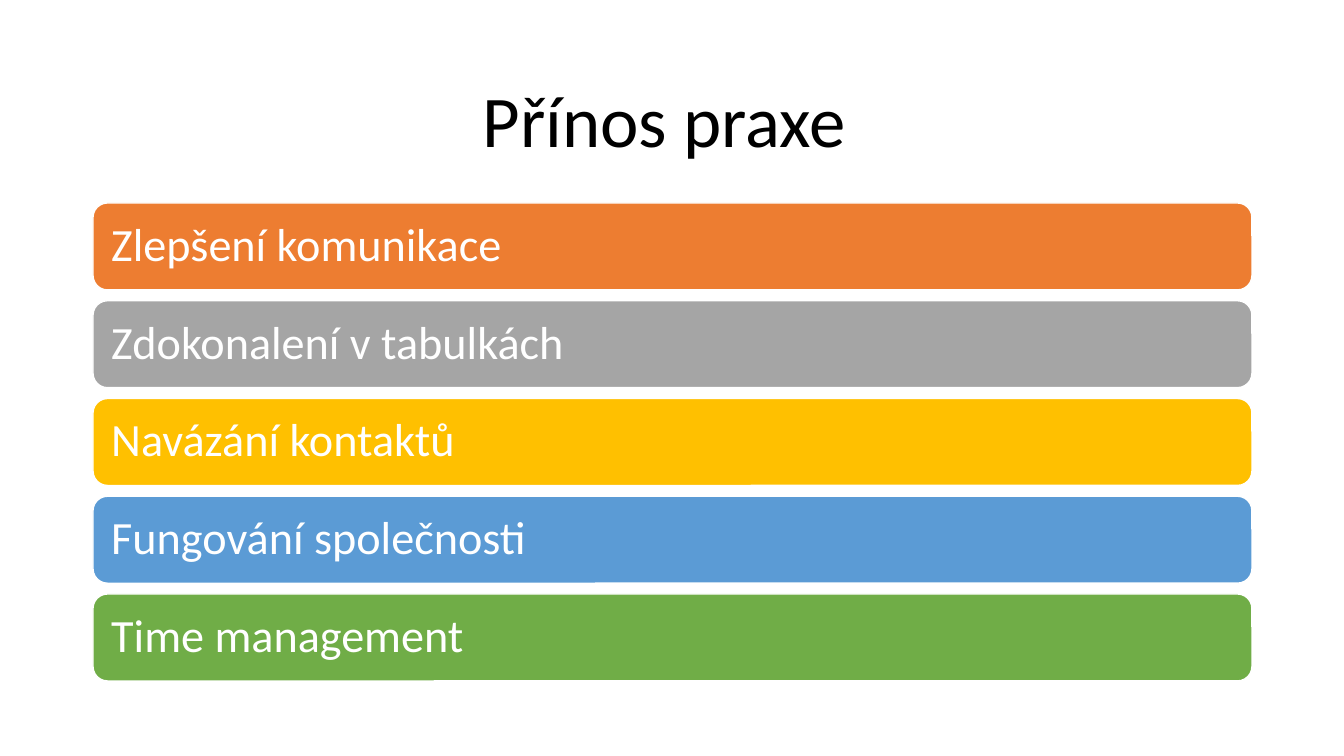
import pptx
import pptx.dml.color
import pptx.enum.shapes
import pptx.enum.text
import pptx.util

EMU_PER_PX = 914400 / 100.8
FONT = "Calibri"
COLORS = {
    "black": "000000",
    "white": "FFFFFF",
    "orange": "ED7D31",
    "gray": "A5A5A5",
    "yellow": "FFC000",
    "blue": "5B9BD5",
    "green": "70AD47",
}
BENEFITS = [
    ("Zlepšení komunikace", "orange"),
    ("Zdokonalení v tabulkách", "gray"),
    ("Navázání kontaktů", "yellow"),
    ("Fungování společnosti", "blue"),
    ("Time management", "green"),
]
LEFT, WIDTH = 93, 1159
BARS_TOP, BARS_BOTTOM, BAR_HEIGHT = 203, 681, 87


def px(value):
    return pptx.util.Emu(round(value * EMU_PER_PX))


def color(name):
    return pptx.dml.color.RGBColor.from_string(COLORS[name])


def write_text(shape, text, *, size, font_color, align, inset):
    frame = shape.text_frame
    frame.word_wrap = True
    frame.auto_size = pptx.enum.text.MSO_AUTO_SIZE.NONE
    frame.vertical_anchor = pptx.enum.text.MSO_ANCHOR.MIDDLE
    frame.margin_left = frame.margin_right = px(inset)
    frame.margin_top = frame.margin_bottom = px(inset / 2)
    paragraph = frame.paragraphs[0]
    paragraph.alignment = align
    paragraph.line_spacing = 0.9
    run = paragraph.add_run()
    run.text = text
    run.font.name = FONT
    run.font.size = pptx.util.Pt(size)
    run.font.color.rgb = color(font_color)


def place_title(slide, text):
    title = slide.shapes.title
    title.left, title.top = px(LEFT), px(61)
    title.width, title.height = px(WIDTH), px(125)
    write_text(title, text, size=52, font_color="black",
               align=pptx.enum.text.PP_ALIGN.CENTER, inset=10)


def add_bar(slide, top, text, fill_color):
    bar = slide.shapes.add_shape(
        pptx.enum.shapes.MSO_SHAPE.ROUNDED_RECTANGLE,
        px(LEFT), px(top), px(WIDTH), px(BAR_HEIGHT))
    bar.shadow.inherit = False
    bar.fill.solid()
    bar.fill.fore_color.rgb = color(fill_color)
    bar.line.color.rgb = color("white")
    bar.line.width = pptx.util.Pt(1)
    write_text(bar, text, size=33, font_color="white",
               align=pptx.enum.text.PP_ALIGN.LEFT, inset=14)


def main():
    presentation = pptx.Presentation()
    presentation.slide_width = px(1344)
    presentation.slide_height = px(756)
    slide = presentation.slides.add_slide(presentation.slide_layouts[5])
    place_title(slide, "Přínos praxe ")
    step = (BARS_BOTTOM - BARS_TOP - BAR_HEIGHT) / (len(BENEFITS) - 1)
    for index, (text, fill_color) in enumerate(BENEFITS):
        add_bar(slide, BARS_TOP + index * step, text, fill_color)
    presentation.save("out.pptx")


if __name__ == "__main__":
    main()
